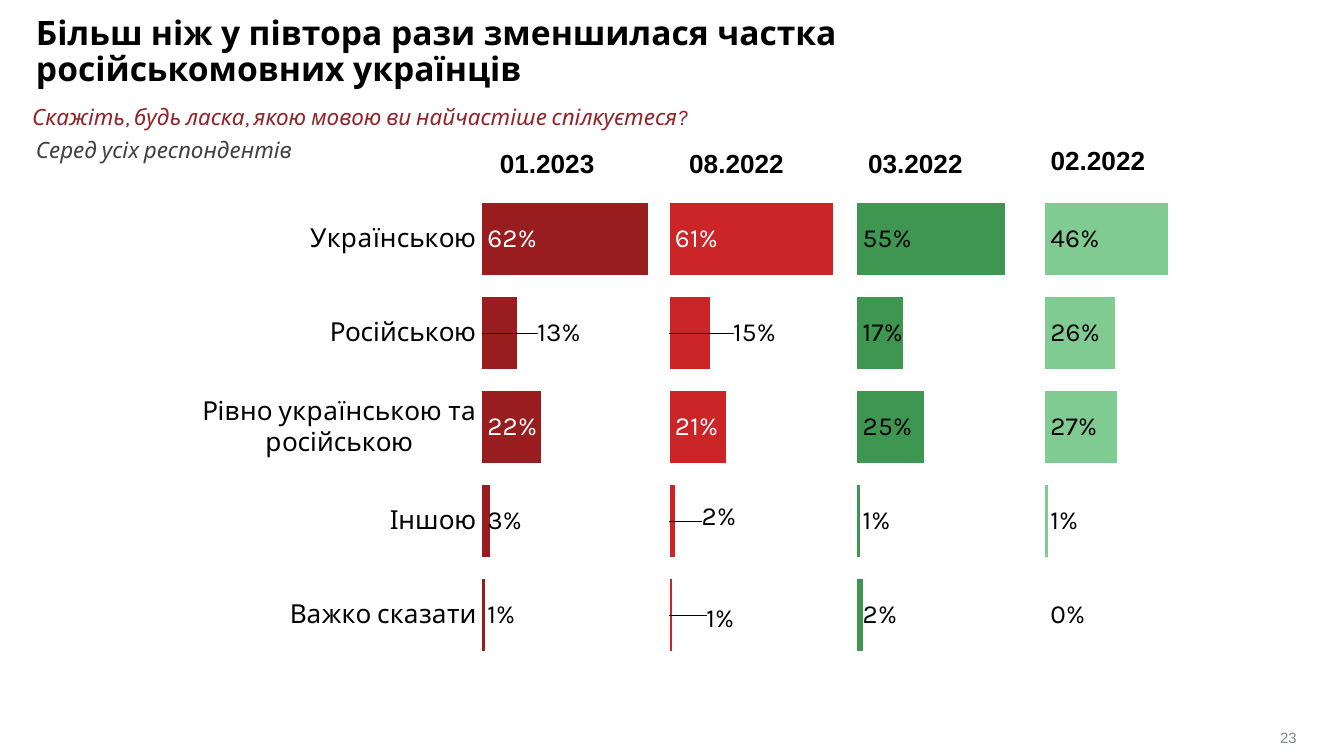
from lxml import etree
from pptx import Presentation
from pptx.chart.data import CategoryChartData
from pptx.dml.color import RGBColor
from pptx.enum.chart import XL_CHART_TYPE, XL_LABEL_POSITION, XL_TICK_MARK
from pptx.enum.text import MSO_ANCHOR, MSO_AUTO_SIZE, PP_ALIGN
from pptx.oxml.ns import qn
from pptx.util import Cm, Pt

STACKED_100 = XL_CHART_TYPE.BAR_STACKED_100
INSIDE_BASE = XL_LABEL_POSITION.INSIDE_BASE
NO_TICK = XL_TICK_MARK.NONE
LEFT, CENTER, RIGHT = PP_ALIGN.LEFT, PP_ALIGN.CENTER, PP_ALIGN.RIGHT
TOP, MIDDLE = MSO_ANCHOR.TOP, MSO_ANCHOR.MIDDLE
BLACK, WHITE = "000000", "FFFFFF"


def style_font(font, name, size, color, bold=False, italic=False):
    font.name, font.size = name, Pt(size)
    font.bold, font.italic = bold, italic
    font.color.rgb = RGBColor.from_string(color)


def add_manual_layout(parent, position, **settings):
    for old_layout in parent.findall(qn("c:layout")):
        parent.remove(old_layout)
    layout = etree.Element(qn("c:layout"))
    manual = etree.SubElement(layout, qn("c:manualLayout"))
    for tag, value in settings.items():
        etree.SubElement(manual, qn(f"c:{tag}")).set("val", str(value))
    parent.insert(position, layout)


presentation = Presentation()
presentation.slide_width, presentation.slide_height = Cm(25.4), Cm(14.29)
slide = presentation.slides.add_slide(presentation.slide_layouts[5])

# Title, survey question, respondent group and page number
title = slide.shapes.title
question = slide.shapes.add_textbox(0, 0, 0, 0)
respondents = slide.shapes.add_textbox(0, 0, 0, 0)
page_number = slide.shapes.add_textbox(0, 0, 0, 0)
page_number.fill.solid()
page_number.fill.fore_color.rgb = RGBColor.from_string(WHITE)
texts = [
    (title, (0.43, 0.18, 20.37, 1.8), (0.25, 0.13), TOP, LEFT, 0.9,
     "Більш ніж у півтора рази зменшилася частка російськомовних українців",
     ("Karla", 18, BLACK, True, False)),
    (question, (0.61, 2.01, 20.4, 0.51), (0, 0), TOP, LEFT, 0.9,
     "Скажіть, будь ласка, якою мовою ви найчастіше спілкуєтеся?",
     ("Karla", 12, "922428", False, True)),
    (respondents, (0.43, 2.51, 7.01, 0.76), (0.25, 0.13), TOP, LEFT, 0.9,
     "Серед усіх респондентів", ("Karla", 12, "404040", False, True)),
    (page_number, (20.9, 13.74, 3.61, 0.41), (0, 0), MIDDLE, RIGHT, 1.0,
     "23", ("Arial", 8, "808585")),
]
for shape, box, insets, anchor, alignment, spacing, text, font in texts:
    shape.left, shape.top, shape.width, shape.height = map(Cm, box)
    frame = shape.text_frame
    frame.word_wrap = True
    frame.auto_size = MSO_AUTO_SIZE.NONE
    frame.vertical_anchor = anchor
    frame.margin_left = frame.margin_right = Cm(insets[0])
    frame.margin_top = frame.margin_bottom = Cm(insets[1])
    paragraph = frame.paragraphs[0]
    paragraph.alignment = alignment
    paragraph.line_spacing = spacing
    run = paragraph.add_run()
    run.text = text
    style_font(run.font, *font)

# Chart data: each survey wave is followed by a clear spacer up to 70 %
waves = [
    ("991C1E", [0.62, 0.13, 0.22, 0.03, 0.01]),
    ("CB2528", [0.61, 0.15, 0.21, 0.02, 0.01]),
    ("3E9651", [0.55, 0.17, 0.25, 0.01, 0.02]),
    ("80CB91", [0.46, 0.26, 0.27, 0.01, 0]),
]
chart_data = CategoryChartData(number_format="0%")
chart_data.categories = ["Українською", "Російською", "Рівно українською та російською",
                         "Іншою", "Важко сказати"]
for index, (color, shares) in enumerate(waves):
    chart_data.add_series(f"Series {2 * index + 1}", shares)
    chart_data.add_series(f"Series {2 * index + 2}", [round(0.7 - share, 2) for share in shares])

chart = slide.shapes.add_chart(STACKED_100, Cm(1.3), Cm(3.38), Cm(22), Cm(9.32), chart_data).chart
chart.has_title = chart.has_legend = False
style_font(chart.font, "Arial", 11, BLACK)
plot = chart.plots[0]
plot.gap_width, plot.overlap = 30, 100
plot.vary_by_categories = False
plot_area = chart._chartSpace.find(qn("c:chart")).find(qn("c:plotArea"))
add_manual_layout(plot_area, 0, layoutTarget="inner", xMode="edge", yMode="edge",
                  x=0.355, y=0.027, w=0.645, h=0.954)

# Axes
category_axis, value_axis = chart.category_axis, chart.value_axis
category_axis.reverse_order = True
category_axis.has_major_gridlines = False
category_axis.major_tick_mark = NO_TICK
category_axis.format.line.fill.background()
style_font(category_axis.tick_labels.font, "Karla", 14, BLACK)
value_axis.minimum_scale, value_axis.maximum_scale = 0, 1
value_axis.has_major_gridlines = False
value_axis.visible = False

# Bars and their labels
for series in plot.series:
    series.invert_if_negative = False
    series.format.fill.background()
    series.format.line.fill.background()
for series, (color, shares) in zip(list(plot.series)[::2], waves):
    series.format.fill.solid()
    series.format.fill.fore_color.rgb = RGBColor.from_string(color)
    labels = series.data_labels
    labels.show_value = True
    labels.number_format, labels.number_format_is_linked = "0%", False
    labels.position = INSIDE_BASE
    style_font(labels.font, "Karla", 14, BLACK)

# White labels on the red bars, shifted labels beside the short ones
label_shifts = [
    {0: None, 2: None, 1: (0.043, 0)},
    {0: None, 2: None, 1: (0.05, 0), 3: (0.023, -0.008), 4: (0.027, 0.008)},
]
for series, shifts in zip(list(plot.series)[::2], label_shifts):
    for point, shift in shifts.items():
        label = series.points[point].data_label
        style_font(label.font, "Karla", 14, BLACK if shift else WHITE)
        label.position = INSIDE_BASE
        if shift:
            element = series._element.xpath(f'.//c:dLbl[c:idx/@val="{point}"]')[0]
            add_manual_layout(element, 1, x=shift[0], y=shift[1])

# Column headings
headings = [("01.2023", 8.41, 2.59), ("08.2022", 11.99, 2.59),
            ("03.2022", 15.37, 2.59), ("02.2022", 18.82, 2.54)]
for text, left, top in headings:
    table = slide.shapes.add_table(1, 1, Cm(left), Cm(top), Cm(3.86), Cm(1.04)).table
    table.first_row = table.horz_banding = False
    cell = table.cell(0, 0)
    cell.fill.background()
    cell.vertical_anchor = MIDDLE
    paragraph = cell.text_frame.paragraphs[0]
    paragraph.alignment = CENTER
    run = paragraph.add_run()
    run.text = text
    style_font(run.font, "Arial", 14, BLACK, bold=True)

presentation.save("out.pptx")
